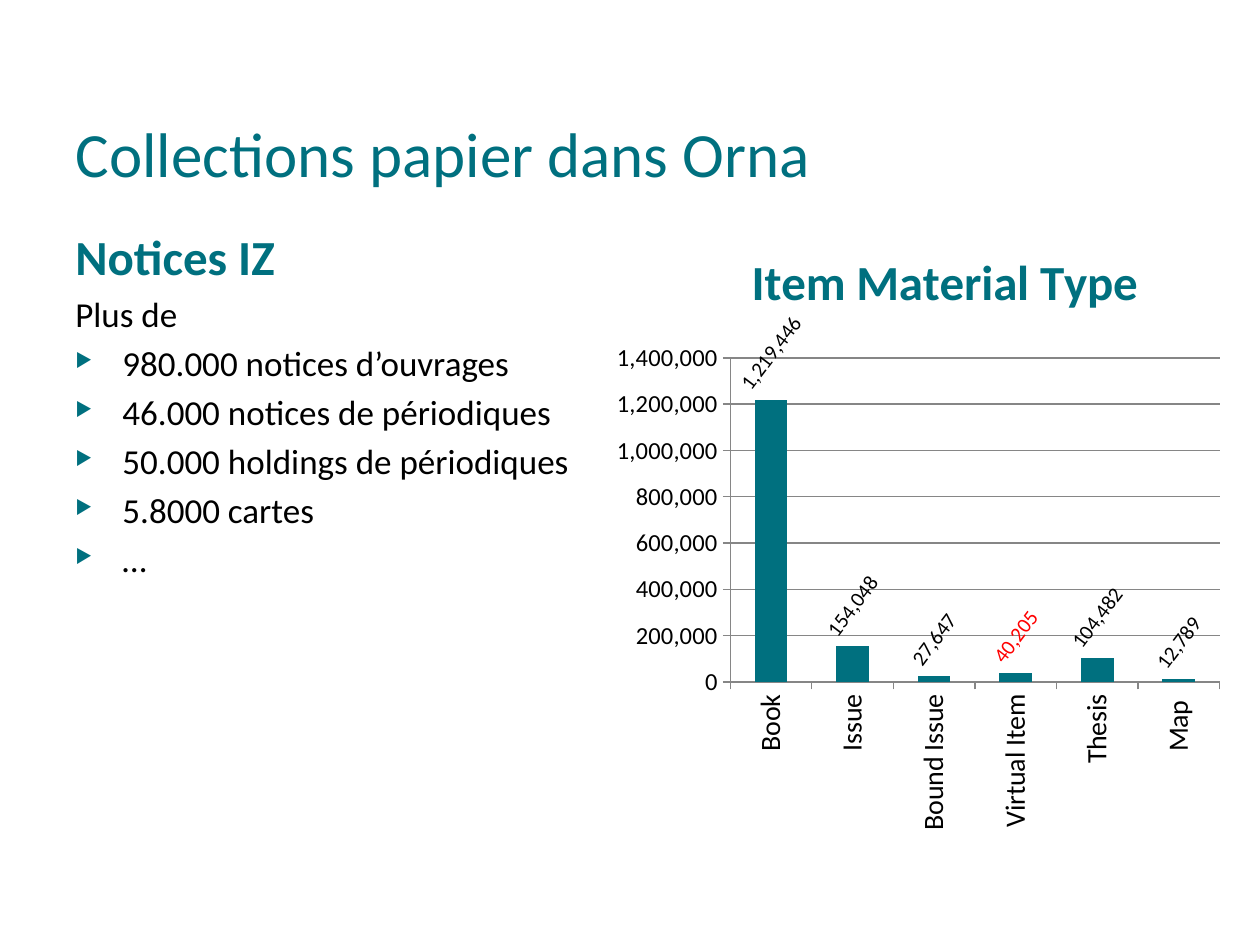
from dataclasses import dataclass

from lxml import etree
from pptx import Presentation
from pptx.chart.data import CategoryChartData
from pptx.dml.color import RGBColor
from pptx.enum.chart import XL_CHART_TYPE, XL_LABEL_POSITION, XL_TICK_MARK
from pptx.enum.text import MSO_ANCHOR, PP_ALIGN
from pptx.oxml import parse_xml
from pptx.oxml.ns import nsdecls, qn
from pptx.util import Cm, Pt

COLUMN = XL_CHART_TYPE.COLUMN_CLUSTERED
ABOVE = XL_LABEL_POSITION.OUTSIDE_END
OUT = XL_TICK_MARK.OUTSIDE
MIDDLE = MSO_ANCHOR.MIDDLE
LEFT = PP_ALIGN.LEFT
COUNT = "#,##0"


@dataclass(frozen=True)
class Theme:
    face: str = "Calibri"
    teal: str = "00707F"
    ink: str = "000000"
    red: str = "FF0000"
    grid: str = "868686"
    title: int = 36
    head: int = 28
    body: int = 20
    base: int = 18
    cats: int = 16
    scale: int = 14
    label: int = 12


class Page:
    def __init__(self, theme, slide):
        self.theme = theme
        self.slide = slide

    def style(self, font, size, color, bold=False):
        font.name = self.theme.face
        font.size = Pt(size)
        font.bold = bold
        font.color.rgb = RGBColor.from_string(color)

    def add_run(self, para, text, size, color, bold=False):
        run = para.add_run()
        run.text = text
        self.style(run.font, size, color, bold)

    def title(self, text, box):
        shape = self.slide.shapes.title
        shape.left, shape.top, shape.width, shape.height = box
        frame = shape.text_frame
        frame.vertical_anchor = MIDDLE
        para = frame.paragraphs[0]
        para.alignment = LEFT
        self.add_run(para, text, self.theme.title, self.theme.teal)

    def bullet(self, para):
        props = para._p.get_or_add_pPr()
        props.set("marL", str(Cm(0.95)))
        props.set("indent", str(-Cm(0.95)))
        color = etree.SubElement(props, qn("a:buClr"))
        etree.SubElement(color, qn("a:srgbClr"), val=self.theme.teal)
        etree.SubElement(props, qn("a:buSzPct"), val="55000")
        etree.SubElement(props, qn("a:buChar"), char="▶")

    def notes(self, head, lead, items, box):
        """Add a heading, a lead-in line and a bulleted list."""
        look = self.theme
        frame = self.slide.shapes.add_textbox(*box).text_frame
        frame.word_wrap = True
        self.add_run(frame.paragraphs[0], head, look.head, look.teal, True)
        for text in (lead, *items):
            para = frame.add_paragraph()
            if text != lead:
                self.bullet(para)
            para.space_before = Pt(look.body * 0.2)
            self.add_run(para, text, look.body, look.ink)

    def place(self, parent, **spots):
        """Give a chart part a manual layout, in fractions of the chart."""
        for old in parent.findall(qn("c:layout")):
            parent.remove(old)
        layout = parse_xml(f"<c:layout {nsdecls('c')}><c:manualLayout/></c:layout>")
        manual = layout[0]
        if "w" in spots:
            etree.SubElement(manual, qn("c:layoutTarget"), val="inner")
        for name in ("x", "y"):
            etree.SubElement(manual, qn(f"c:{name}Mode"), val="edge")
        for name, value in spots.items():
            etree.SubElement(manual, qn(f"c:{name}"), val=str(value))
        text = parent.find(qn("c:tx"))
        parent.insert(0 if text is None else 1, layout)

    def turn(self, owner, angle):
        body = owner.find(qn("c:txPr")).find(qn("a:bodyPr"))
        body.set("rot", str(angle * 60000))
        body.set("vert", "horz")

    def axis(self, axis, size):
        axis.major_tick_mark = OUT
        axis.format.line.color.rgb = RGBColor.from_string(self.theme.grid)
        self.style(axis.tick_labels.font, size, self.theme.ink)

    def labels(self, series, marked):
        look = self.theme
        tags = series.data_labels
        tags.show_value = True
        tags.number_format = COUNT
        tags.number_format_is_linked = False
        tags.position = ABOVE
        self.style(tags.font, look.label, look.ink)
        self.turn(tags._element, -53)
        tag = series.points[marked].data_label
        self.style(tag.font, look.label, look.red)
        tag.position = ABOVE
        self.turn(tags._element.find(qn("c:dLbl")), -53)

    def chart(self, name, counts, marked, box):
        look = self.theme
        data = CategoryChartData(number_format=COUNT)
        data.categories = list(counts)
        data.add_series(name, list(counts.values()))
        chart = self.slide.shapes.add_chart(COLUMN, *box, data).chart
        self.style(chart.font, look.base, look.ink)
        chart.has_legend = False

        para = chart.chart_title.text_frame.paragraphs[0]
        self.add_run(para, name, look.head, look.teal, True)
        self.place(chart.chart_title._element, x=0.22, y=0.03)
        self.place(chart._chartSpace.chart.plotArea, x=0.2, y=0.22, w=0.78, h=0.52)

        self.axis(chart.category_axis, look.cats)
        self.turn(chart.category_axis._element, -90)
        scale = chart.value_axis
        self.axis(scale, look.scale)
        scale.minimum_scale, scale.maximum_scale = 0, 1400000
        scale.major_unit = 200000
        scale.tick_labels.number_format = COUNT
        scale.tick_labels.number_format_is_linked = False
        lines = scale.major_gridlines.format.line
        lines.color.rgb = RGBColor.from_string(look.grid)

        plot = chart.plots[0]
        plot.gap_width = 150
        plot.vary_by_categories = False
        series = plot.series[0]
        series.format.fill.solid()
        series.format.fill.fore_color.rgb = RGBColor.from_string(look.teal)
        self.labels(series, marked)


def main():
    deck = Presentation()
    deck.slide_width, deck.slide_height = Cm(25.4), Cm(19.05)
    page = Page(Theme(), deck.slides.add_slide(deck.slide_layouts[5]))
    left, top, high = Cm(1.27), Cm(4.45), Cm(12.57)

    page.title("Collections papier dans Orna", (left, Cm(2.21), Cm(22.86), Cm(1.73)))
    items = (
        "980.000 notices d’ouvrages",
        "46.000 notices de périodiques",
        "50.000 holdings de périodiques",
        "5.8000 cartes",
        "…",
    )
    page.notes("Notices IZ", "Plus de", items, (left, top, Cm(11.23), high))
    counts = {
        "Book": 1219446,
        "Issue": 154048,
        "Bound Issue": 27647,
        "Virtual Item": 40205,
        "Thesis": 104482,
        "Map ": 12789,
    }
    box = (Cm(12.19), top, Cm(12.65), high)
    page.chart("Item Material Type", counts, 3, box)
    deck.save("out.pptx")


if __name__ == "__main__":
    main()
